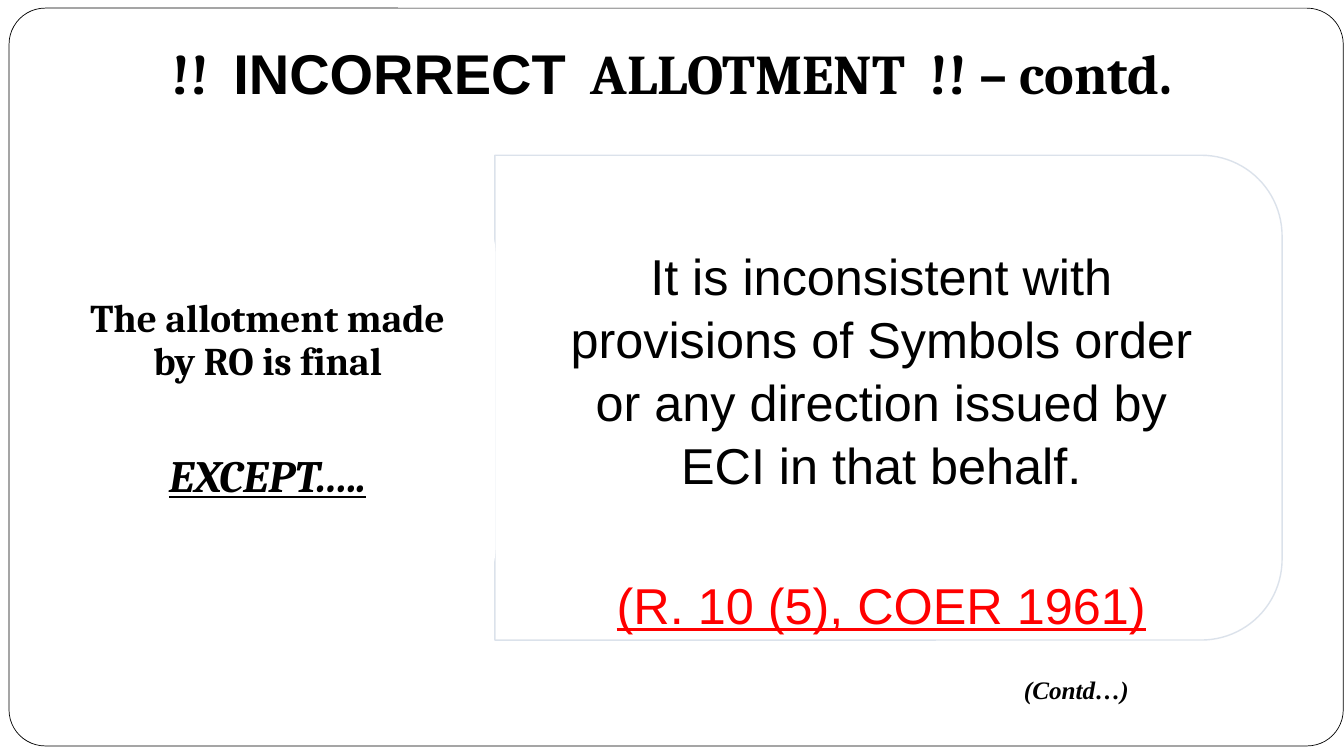
import dataclasses

import lxml.etree
import pptx
import pptx.dml.color
import pptx.enum.shapes
import pptx.enum.text
import pptx.oxml.ns
import pptx.util

Pt = pptx.util.Pt
RGB = pptx.dml.color.RGBColor.from_string
Kind = pptx.enum.shapes.MSO_SHAPE
Align = pptx.enum.text.PP_ALIGN
Mid = pptx.enum.text.MSO_ANCHOR.MIDDLE


@dataclasses.dataclass(frozen=True)
class Theme:
    """Colours, fonts and type sizes of the slide."""
    ink: str = "000000"
    paper: str = "FFFFFF"
    edge: str = "D8DFE9"
    alert: str = "FF0000"
    serif: str = "Cambria"
    sans: str = "Arial"
    roman: str = "Times New Roman"
    title: int = 40
    rule: int = 36
    stress: int = 32
    lead: int = 28
    note: int = 18


THEME = Theme()


def style(font, face, size, color=THEME.ink, bold=False, italic=False, under=False):
    """Format one font."""
    font.name, font.size = face, Pt(size)
    font.color.rgb = RGB(color)
    font.bold, font.italic, font.underline = bold, italic, under


def add_box(slide, kind, area, line, width, fill=None):
    """Add an outlined shape, filled or clear."""
    shape = slide.shapes.add_shape(kind, *map(Pt, area))
    shape.shadow.inherit = False
    if fill:
        shape.fill.solid()
        shape.fill.fore_color.rgb = RGB(fill)
    else:
        shape.fill.background()
    shape.line.color.rgb = RGB(line)
    shape.line.width = Pt(width)
    return shape


def fade_line(shape, percent):
    """Set the opacity of an outline."""
    tag = pptx.oxml.ns.qn
    color = shape.element.find(f".//{tag('a:ln')}//{tag('a:srgbClr')}")
    lxml.etree.SubElement(color, tag("a:alpha"), val=str(percent * 1000))


def add_text(slide, area, lines, align=Align.CENTER, wrap=True, space=None):
    """Add a text box from (text, font options, space before) lines."""
    frame = slide.shapes.add_textbox(*map(Pt, area)).text_frame
    frame.word_wrap = wrap
    for index, (text, look, before) in enumerate(lines):
        para = frame.paragraphs[0] if index == 0 else frame.add_paragraph()
        para.text = text
        para.alignment = align
        para.space_before = Pt(before)
        para.line_spacing = space
        style(para.font, **look)
    return frame


def set_title(slide, area, parts):
    """Place the title and fill it with (text, face) runs."""
    title = slide.shapes.title
    title.left, title.top, title.width, title.height = map(Pt, area)
    frame = title.text_frame
    frame.vertical_anchor = Mid
    frame.margin_bottom = Pt(7.2)
    para = frame.paragraphs[0]
    para.alignment = Align.CENTER
    for text, face in parts:
        run = para.add_run()
        run.text = text
        style(run.font, face, THEME.title, bold=True)
    return title


def main():
    """Build the slide and save it."""
    deck = pptx.Presentation()
    deck.slide_width, deck.slide_height = Pt(960), Pt(540)
    slide = deck.slides.add_slide(deck.slide_layouts[5])

    frame = add_box(slide, Kind.ROUNDED_RECTANGLE, (6.5, 5.8, 953, 527),
                    THEME.ink, 0.5, THEME.paper)
    frame.adjustments[0] = 0.049
    title = set_title(slide, (28.8, 20.9, 902.2, 65.5), [
        ("!!  ", THEME.serif),
        ("INCORRECT", THEME.sans),
        ("  ALLOTMENT  !! – contd.", THEME.serif),
    ])
    frame.element.addnext(title.element)

    panel = add_box(slide, Kind.ROUND_2_SAME_RECTANGLE, (461.5, 2.9, 346.3, 562.3),
                    THEME.edge, 1)
    panel.rotation = 90
    fade_line(panel, 90)
    add_box(slide, Kind.ROUNDED_RECTANGLE, (28.8, 129.6, 324.7, 313.2),
            THEME.paper, 1, THEME.paper)

    lead = dict(face=THEME.serif, size=THEME.lead, bold=True)
    stress = dict(lead, size=THEME.stress, italic=True, under=True)
    left = add_text(slide, (43.9, 144.7, 294.5, 283), [
        ("The allotment made by RO is final", lead, 0),
        ("EXCEPT…..", stress, 50),
    ], space=0.9)
    left.vertical_anchor = Mid
    left.margin_left = left.margin_right = Pt(8.4)

    rule = dict(face=THEME.sans, size=THEME.rule)
    source = dict(rule, color=THEME.alert, under=True)
    add_text(slide, (389.5, 169.9, 480.2, 280.8), [
        ("It is inconsistent with provisions of Symbols order or any direction "
         "issued by ECI in that behalf.", rule, 5.8),
        ("(R. 10 (5), COER 1961)", source, 55),
    ], space=1.04)

    note = dict(face=THEME.roman, size=THEME.note, bold=True, italic=True)
    add_text(slide, (724.3, 478.1, 90, 28.8), [("(Contd…)", note, 0)],
             align=Align.LEFT, wrap=False)
    deck.save("out.pptx")


if __name__ == "__main__":
    main()
